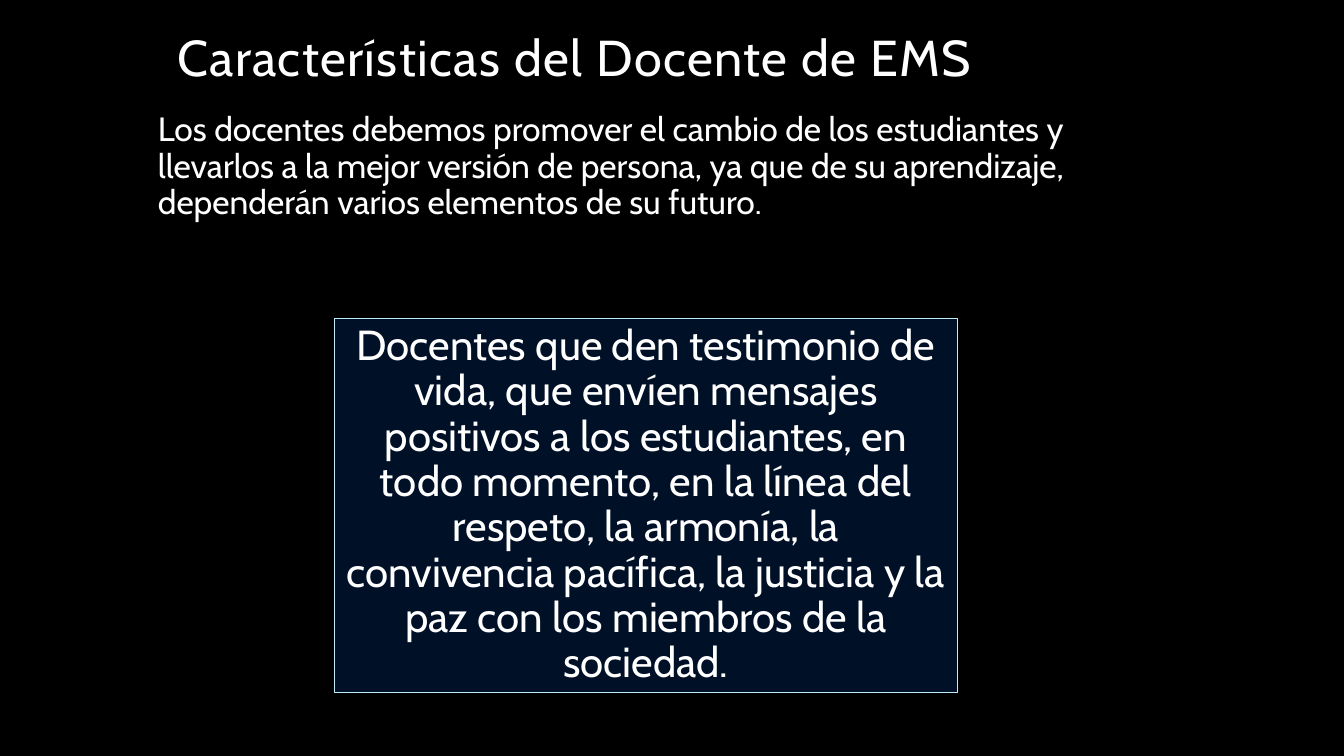
import pptx
import pptx.dml.color
import pptx.enum.shapes
import pptx.enum.text
import pptx.util

Cm = pptx.util.Cm
Pt = pptx.util.Pt
RGBColor = pptx.dml.color.RGBColor
Align = pptx.enum.text.PP_ALIGN
Anchor = pptx.enum.text.MSO_ANCHOR

BLACK = RGBColor(0x00, 0x00, 0x00)
WHITE = RGBColor(0xFF, 0xFF, 0xFF)
NAVY = RGBColor(0x00, 0x10, 0x27)
PALE_BLUE = RGBColor(0xC1, 0xEB, 0xF7)

TITLE = {
    "text": "Características del Docente de EMS",
    "place": (4.22, -1.47, 25.4, 3.81),
    "frame": {"vertical_anchor": Anchor.BOTTOM},
    "align": Align.LEFT,
    "size": 36,
}
PURPOSE = {
    "text": "Los docentes debemos promover el cambio de los estudiantes y "
            "llevarlos a la mejor versión de persona, ya que de su aprendizaje, "
            "dependerán varios elementos de su futuro.",
    "place": (3.73, 2.72, 25.88, 4.39),
    "frame": {"vertical_anchor": Anchor.TOP},
    "align": Align.LEFT,
    "size": 24,
}
TESTIMONY = {
    "text": "Docentes que den testimonio de vida, que envíen mensajes positivos "
            "a los estudiantes, en todo momento, en la línea del respeto, la "
            "armonía, la convivencia pacífica, la justicia y la paz con los "
            "miembros de la sociedad.",
    "place": (8.43, 8.03, 15.7, 9.42),
    "frame": {
        "vertical_anchor": Anchor.MIDDLE,
        "margin_left": Cm(0.3),
        "margin_top": Cm(0.3),
        "margin_right": Cm(0.3),
        "margin_bottom": Cm(0.3),
    },
    "align": Align.CENTER,
    "size": 30,
}


def set_all(target, values):
    for name, value in values.items():
        setattr(target, name, value)


def write(shape, content):
    frame = shape.text_frame
    set_all(frame, {"word_wrap": True, **content["frame"]})
    paragraph = frame.paragraphs[0]
    set_all(paragraph, {"alignment": content["align"], "line_spacing": 0.9})
    run = paragraph.add_run()
    run.text = content["text"]
    set_all(run.font, {"name": "Cabin", "size": Pt(content["size"])})
    run.font.color.rgb = WHITE
    return run


def place(content):
    return [Cm(length) for length in content["place"]]


def main():
    deck = pptx.Presentation()
    set_all(deck, {"slide_width": Cm(33.87), "slide_height": Cm(19.05)})
    slide = deck.slides.add_slide(deck.slide_layouts[6])
    slide.background.fill.solid()
    slide.background.fill.fore_color.rgb = BLACK

    title = write(slide.shapes.add_textbox(*place(TITLE)), TITLE)
    title.font._element.set("spc", "100")
    write(slide.shapes.add_textbox(*place(PURPOSE)), PURPOSE)

    testimony = slide.shapes.add_shape(
        pptx.enum.shapes.MSO_SHAPE.RECTANGLE, *place(TESTIMONY))
    testimony.shadow.inherit = False
    testimony.fill.solid()
    testimony.fill.fore_color.rgb = NAVY
    testimony.line.color.rgb = PALE_BLUE
    testimony.line.width = Pt(1)
    write(testimony, TESTIMONY)

    deck.save("out.pptx")


if __name__ == "__main__":
    main()
